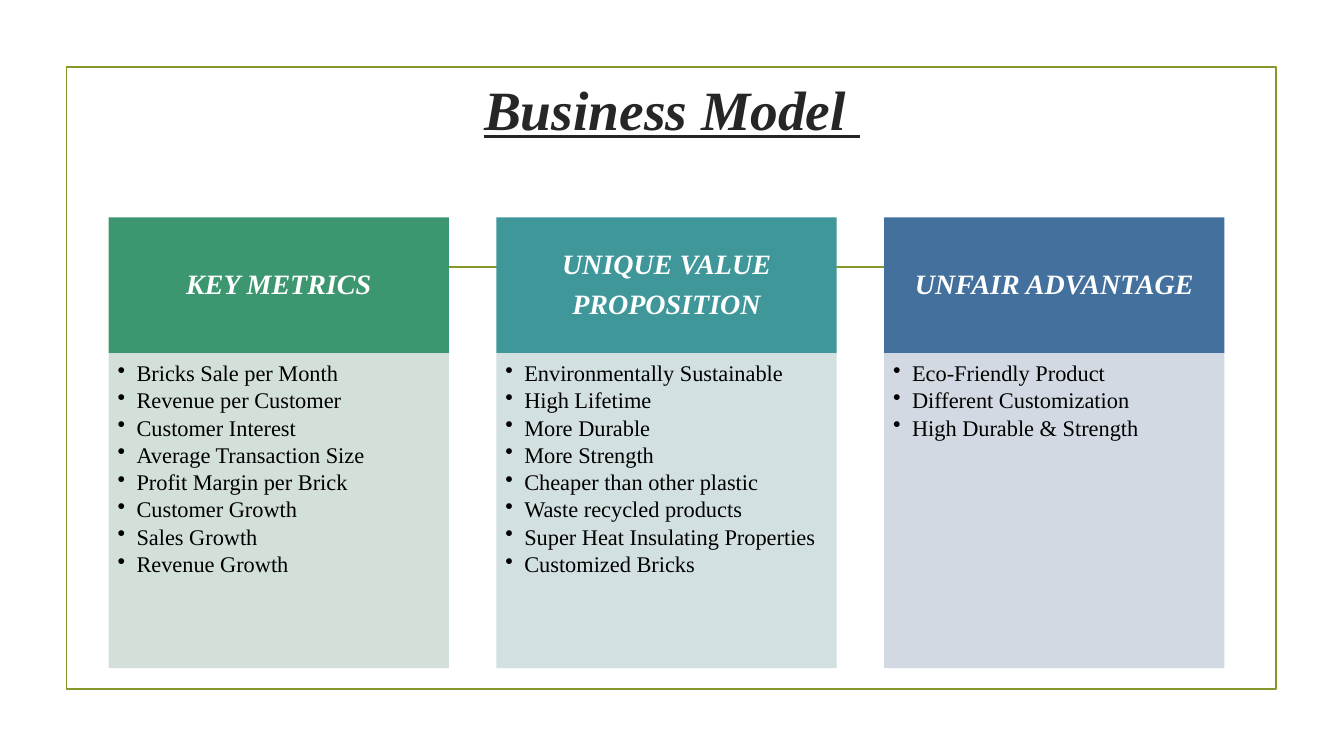
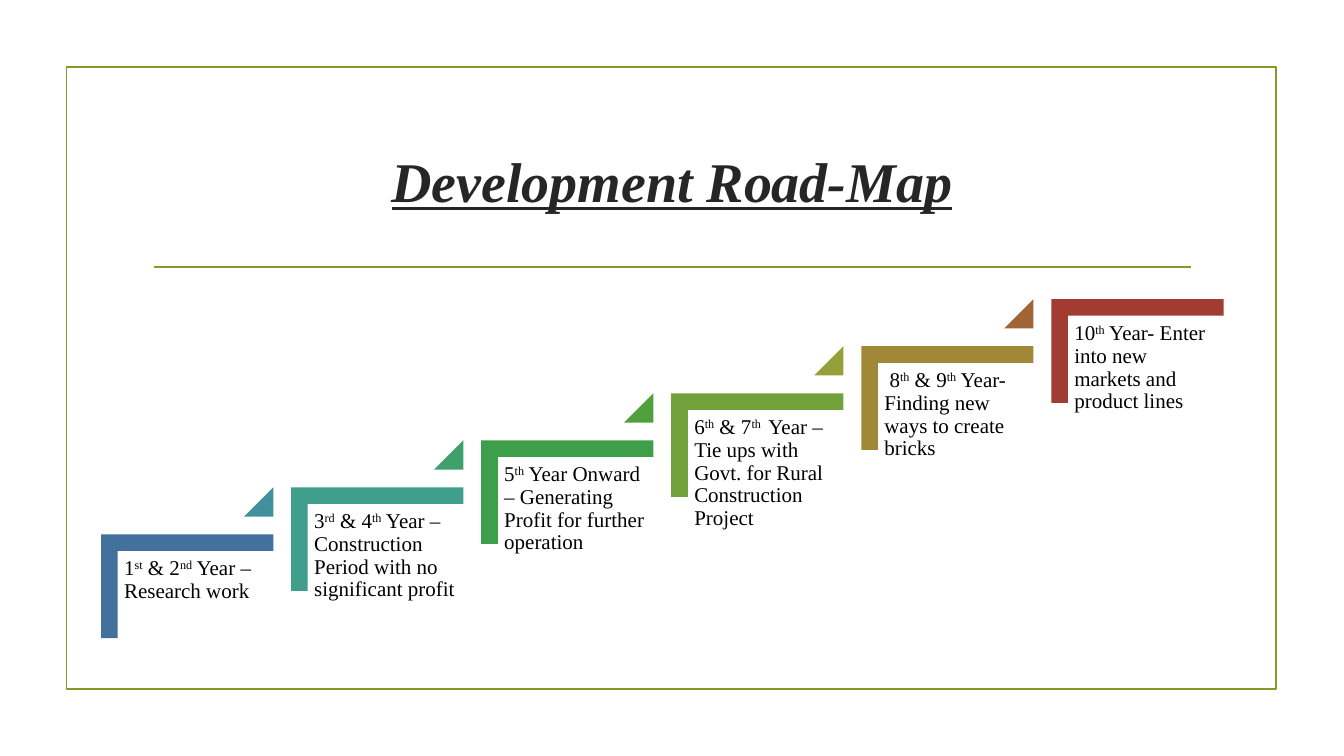
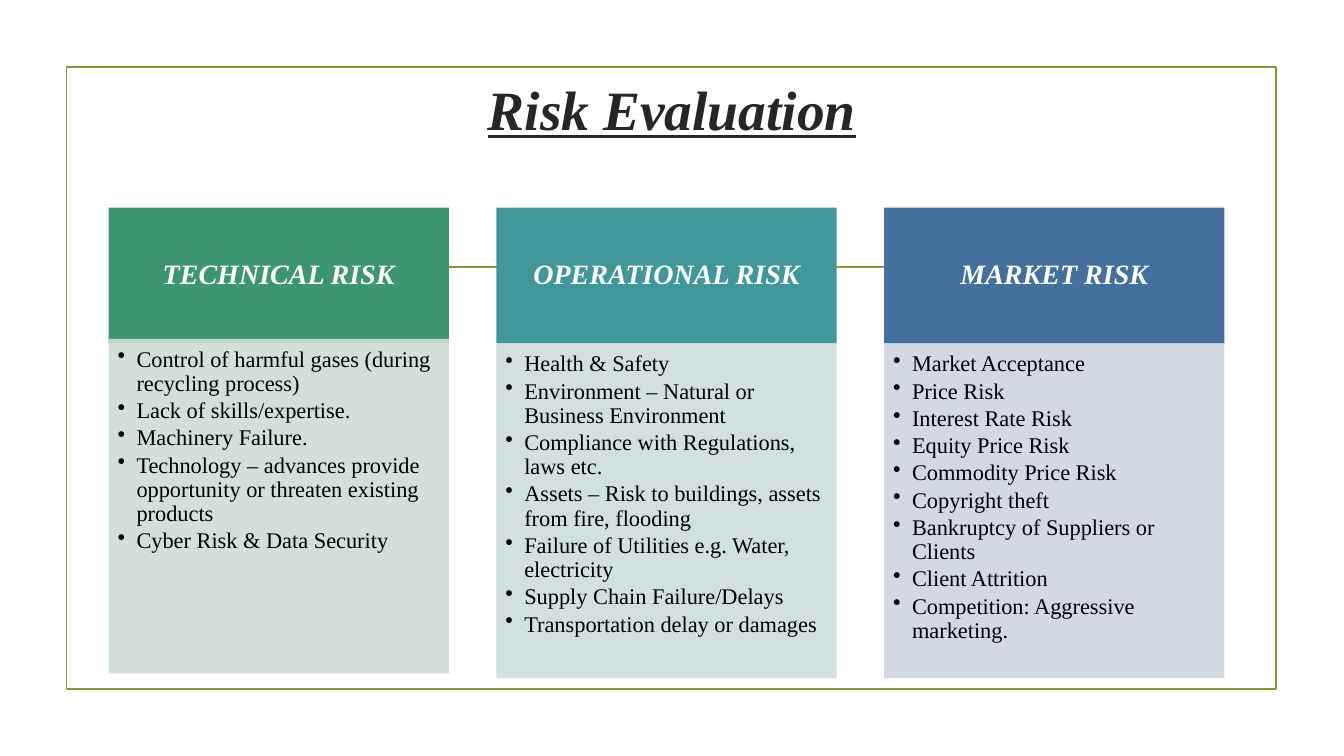
from lxml import etree
from pptx import Presentation
from pptx.dml.color import RGBColor
from pptx.enum import shapes as kinds, text as te
from pptx.oxml import ns
from pptx.util import Pt

FONT = "Times New Roman"
COLORS = {
    "accent": "83992A", "title": "262626", "text": "000000", "light": "FFFFFF",
    "green": "3C9770", "green_tint": "CEDDD5",
    "teal": "40979A", "teal_tint": "CFDDDE",
    "blue": "44709D", "blue_tint": "CFD5DF",
}
COLUMN_COLORS = ["green", "teal", "blue"]
STEP_COLORS = ["44709D", "409E8D", "3D9F4A", "72A03A", "A18836", "A23C33"]
MARKER_COLORS = ["428F9E", "3F9F6D", "50A03B", "95A138", "A26335"]

BUSINESS_MODEL = [
    (["KEY METRICS"],
     ["Bricks Sale per Month", "Revenue per Customer", "Customer Interest",
      "Average Transaction Size", "Profit Margin per Brick", "Customer Growth",
      "Sales Growth", "Revenue Growth"]),
    (["UNIQUE VALUE", "PROPOSITION"],
     ["Environmentally Sustainable", "High Lifetime", "More Durable", "More Strength",
      "Cheaper than other plastic", "Waste recycled products",
      "Super Heat Insulating Properties", "Customized Bricks"]),
    (["UNFAIR ADVANTAGE"],
     ["Eco-Friendly Product", "Different Customization", "High Durable & Strength"]),
]
ROAD_MAP = [
    "1^st^ & 2^nd^ Year – Research work",
    "3^rd^ & 4^th^ Year – Construction Period with no significant profit",
    "5^th^ Year Onward – Generating Profit for further operation",
    "6^th^ & 7^th ^ Year – Tie ups with Govt. for Rural Construction Project",
    " 8^th^ & 9^th^ Year- Finding new ways to create bricks",
    "10^th^ Year- Enter into new markets and product lines",
]
RISKS = [
    (["TECHNICAL RISK"],
     ["Control of harmful gases (during recycling process)", "Lack of skills/expertise.",
      "Machinery Failure.",
      "Technology – advances provide opportunity or threaten existing products",
      "Cyber Risk & Data Security"]),
    (["OPERATIONAL RISK"],
     ["Health & Safety", "Environment – Natural or Business Environment",
      "Compliance with Regulations, laws etc.",
      "Assets – Risk to buildings, assets from fire, flooding",
      "Failure of Utilities e.g. Water, electricity", "Supply Chain Failure/Delays",
      "Transportation delay or damages"]),
    (["MARKET RISK"],
     ["Market Acceptance", "Price Risk", "Interest Rate Risk", "Equity Price Risk",
      "Commodity Price Risk", "Copyright theft", "Bankruptcy of Suppliers or Clients",
      "Client Attrition", "Competition: Aggressive marketing."]),
]


def rgb(color):
    return RGBColor.from_string(COLORS.get(color, color))


def add_bullet(paragraph, indent=13.5):
    props = paragraph._p.get_or_add_pPr()
    props.set("marL", str(Pt(indent)))
    props.set("indent", str(-Pt(indent)))
    etree.SubElement(props, ns.qn("a:buChar")).set("char", "•")


def write(frame, lines, *, size, color="text", bold=False, underline=False, bullet=False,
          align=te.PP_ALIGN.LEFT, anchor=te.MSO_ANCHOR.TOP, spacing=0.9, after=0,
          insets=(7.2, 3.6, 7.2, 3.6)):
    """Fill a text frame, one paragraph a line; ^...^ marks superscript, bold is also italic."""
    frame.word_wrap = True
    frame.auto_size = te.MSO_AUTO_SIZE.NONE
    frame.vertical_anchor = anchor
    (frame.margin_left, frame.margin_top,
     frame.margin_right, frame.margin_bottom) = map(Pt, insets)
    for index, line in enumerate(lines):
        paragraph = frame.add_paragraph() if index else frame.paragraphs[0]
        if bullet:
            add_bullet(paragraph)
        paragraph.alignment = align
        paragraph.line_spacing = spacing
        paragraph.space_before = Pt(0)
        paragraph.space_after = Pt(after)
        for part, words in enumerate(line.split("^")):
            run = paragraph.add_run()
            run.text = words
            font = run.font
            font.name, font.size = FONT, Pt(size)
            font.bold = font.italic = bold
            font.underline = underline
            font.color.rgb = rgb(color)
            if part % 2:
                run._r.get_or_add_rPr().set("baseline", "30000")


def add_block(slide, preset, left, top, width, height, fill, alpha=None):
    block = slide.shapes.add_shape(preset, Pt(left), Pt(top), Pt(width), Pt(height))
    block.shadow.inherit = False
    block.line.fill.background()
    block.fill.solid()
    block.fill.fore_color.rgb = rgb(fill)
    if alpha:
        tint = block.element.spPr.find(".//" + ns.qn("a:srgbClr"))
        etree.SubElement(tint, ns.qn("a:alpha")).set("val", str(alpha * 1000))
    return block


def decorate_layout(layout, slide):
    """Draw the frame and rule on a slide, then move them to the layout all slides share."""
    for placeholder in list(layout.placeholders):
        if placeholder.placeholder_format.type != kinds.PP_PLACEHOLDER.TITLE:
            layout.shapes.element.remove(placeholder.element)
    border = add_block(slide, kinds.MSO_SHAPE.RECTANGLE, 47.5, 48, 864, 444, "light")
    border.fill.background()
    rule = slide.shapes.add_connector(
        kinds.MSO_CONNECTOR.STRAIGHT, Pt(110), Pt(190.8), Pt(850.5), Pt(190.8))
    etree.SubElement(rule.element.spPr, ns.qn("a:effectLst"))
    for outline in (border, rule):
        outline.line.color.rgb = rgb("accent")
        outline.line.width = Pt(1.25)
        layout.shapes.element.append(outline.element)


def set_title(slide, words, top=51.8, height=51, size=39.6):
    title = slide.shapes.title
    title.left, title.top, title.width, title.height = map(Pt, (102, top, 756, height))
    write(title.text_frame, [words], size=size, color="title", bold=True, underline=True,
          align=te.PP_ALIGN.CENTER, anchor=te.MSO_ANCHOR.MIDDLE, spacing=1.0)


def add_columns(slide, columns, top, list_height, raises=(0, 0, 0)):
    """Draw headed lists side by side; raises lifts each list over its heading."""
    left, pitch, width, head_height = 77.6, 277, 243, 97
    rectangle = kinds.MSO_SHAPE.RECTANGLE
    for index, (heading, items) in enumerate(columns):
        x, color = left + index * pitch, COLUMN_COLORS[index]
        head = add_block(slide, rectangle, x, top, width, head_height, color)
        write(head.text_frame, heading, size=20, color="light", bold=True, after=7,
              align=te.PP_ALIGN.CENTER, anchor=te.MSO_ANCHOR.MIDDLE,
              insets=(11.4, 6.5, 11.4, 6.5))
        panel = add_block(slide, rectangle, x, top + head_height - raises[index],
                          width, list_height, color + "_tint", alpha=90)
        write(panel.text_frame, items, size=16, bullet=True, after=2.2,
              insets=(6.4, 6.4, 8.6, 9.6))


def add_stairs(slide, steps):
    left, top, run, rise = 72.2, 381.7, 135.75, 33.6
    width, height, marker = 123, 74, 20.9
    for index, words in enumerate(steps):
        x, y = left + index * run, top - index * rise
        # The preset is upright, so its sides are swapped around the same centre.
        shift = (width - height) / 2
        corner = add_block(slide, kinds.MSO_SHAPE.CORNER, x + shift, y - shift,
                           height, width, STEP_COLORS[index])
        corner.rotation = 90
        corner.adjustments[0] = corner.adjustments[1] = 0.16
        label = slide.shapes.add_textbox(Pt(x + 12), Pt(y + 12.2), Pt(111), Pt(97))
        write(label.text_frame, [words], size=15, insets=(4.5,) * 4)
        if index < len(MARKER_COLORS):
            triangle = add_block(slide, kinds.MSO_SHAPE.ISOSCELES_TRIANGLE,
                                 x + width - marker, y - rise, marker, marker,
                                 MARKER_COLORS[index])
            triangle.adjustments[0] = 1


def main():
    deck = Presentation()
    deck.slide_width, deck.slide_height = Pt(960), Pt(540)
    layout = deck.slide_layouts[5]
    model, road_map, risk = (deck.slides.add_slide(layout) for _ in range(3))
    decorate_layout(layout, model)

    set_title(model, "Business Model ")
    add_columns(model, BUSINESS_MODEL, top=155.3, list_height=225)

    set_title(road_map, "Development Road-Map", top=77, height=103, size=40)
    add_stairs(road_map, ROAD_MAP)

    set_title(risk, "Risk Evaluation")
    add_columns(risk, RISKS, top=148.4, list_height=239, raises=(3.4, 0, 0))

    deck.save("out.pptx")


if __name__ == "__main__":
    main()
